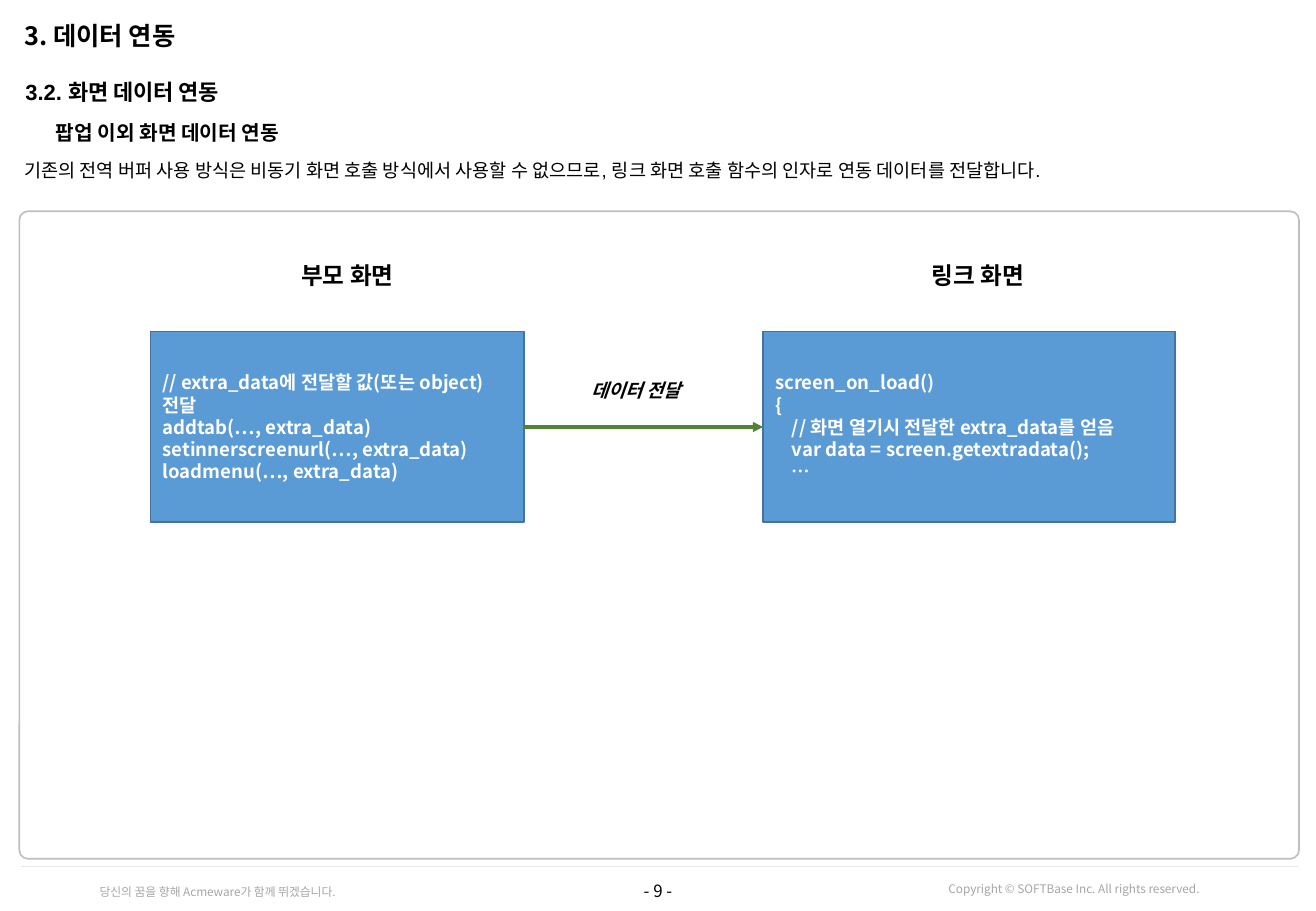
from lxml import etree
from pptx import Presentation
from pptx.dml.color import RGBColor
from pptx.enum.shapes import MSO_CONNECTOR, MSO_SHAPE
from pptx.enum.text import MSO_ANCHOR, MSO_AUTO_SIZE, PP_ALIGN
from pptx.oxml.ns import qn
from pptx.util import Inches, Pt

LEFT, CENTER, RIGHT = PP_ALIGN.LEFT, PP_ALIGN.CENTER, PP_ALIGN.RIGHT
TOP, MIDDLE = MSO_ANCHOR.TOP, MSO_ANCHOR.MIDDLE
BLACK = RGBColor(0x00, 0x00, 0x00)
WHITE = RGBColor(0xFF, 0xFF, 0xFF)
BLUE = RGBColor(0x5B, 0x9B, 0xD5)
DARK_BLUE = RGBColor(0x43, 0x73, 0x9E)
GREEN = RGBColor(0x54, 0x82, 0x35)
FRAME_GRAY = RGBColor(0xBF, 0xBF, 0xBF)
RULE_GRAY = RGBColor(0xE7, 0xE6, 0xE6)
FOOTER_GRAY = RGBColor(0xA6, 0xA6, 0xA6)
NOTO, ARIAL = "Noto Sans CJK KR", "Arial"

# Content: left, top, width, height in inches
TITLE = ("3. 데이터 연동", (0.16, 0.13, 10.55, 0.34))
HEADINGS = [  # text, place, size, font, bold
    ("3.2. 화면 데이터 연동", (0.17, 0.61, 10.54, 0.28), 13, ARIAL, True),
    ("팝업 이외 화면 데이터 연동", (0.42, 0.95, 10.29, 0.28), 12, NOTO, True),
    ("기존의 전역 버퍼 사용 방식은 비동기 화면 호출 방식에서 사용할 수 없으므로, "
     "링크 화면 호출 함수의 인자로 연동 데이터를 전달합니다.",
     (0.16, 1.27, 10.55, 0.41), 11, ARIAL, False),
]
FOOTERS = [  # text, place, size, colour, alignment
    ("- 9 -", (0, 7.18, 10.83, 0.31), 10, BLACK, CENTER),
    ("Copyright © SOFTBase Inc. All rights reserved.",
     (7.7, 7.21, 2.27, 0.22), 7, FOOTER_GRAY, RIGHT),
    ("당신의 꿈을 향해 Acmeware가 함께 뛰겠습니다.",
     (0.58, 7.23, 2.28, 0.22), 7, FOOTER_GRAY, RIGHT),
]
SCREENS = [  # code lines, left, width
    ("// extra_data에 전달할 값(또는 object) 전달\n"
     "addtab(…, extra_data)\n"
     "setinnerscreenurl(…, extra_data)\n"
     "loadmenu(…, extra_data)", 1.24, 3.07),
    ("screen_on_load()\n"
     "{\n"
     "    // 화면 열기시 전달한 extra_data를 얻음\n"
     "    var data = screen.getextradata();\n"
     "    …", 6.28, 3.39),
]
SCREEN_TOP, SCREEN_HEIGHT = 2.73, 1.57
LABELS = [  # text, place, size, italic
    ("부모 화면", (2.33, 2.1, 1.06, 0.34), 14, False),
    ("링크 화면", (7.52, 2.1, 1.06, 0.34), 14, False),
    ("데이터 전달", (4.72, 3.07, 1.03, 0.29), 11, True),
]


def inches(place):
    return [Inches(value) for value in place]


def write(box, text, size, font=NOTO, color=BLACK, bold=False, italic=False,
          align=LEFT, anchor=TOP, inset=None, wrap=True):
    frame = box.text_frame
    frame.text = text
    frame.word_wrap = wrap
    frame.auto_size = MSO_AUTO_SIZE.NONE
    frame.vertical_anchor = anchor
    if inset is not None:
        frame.margin_left = frame.margin_right = Inches(inset)
        frame.margin_top = frame.margin_bottom = Inches(inset)
    for para in frame.paragraphs:
        para.alignment = align
        for span in para.runs:
            span.font.size, span.font.name = Pt(size), font
            span.font.bold, span.font.italic = bold, italic
            span.font.color.rgb = color
            etree.SubElement(span.font._element, qn("a:ea"), typeface=NOTO)


def add_line(page, start, end, color, width):
    line = page.shapes.add_connector(MSO_CONNECTOR.STRAIGHT, *inches(start + end))
    line.line.color.rgb, line.line.width = color, Pt(width)
    etree.SubElement(line._element.spPr, qn("a:effectLst"))
    return line


def add_box(page, kind, place, color, fill=None):
    box = page.shapes.add_shape(kind, *inches(place))
    box.shadow.inherit = False
    box.line.color.rgb, box.line.width = color, Pt(1)
    if fill is None:
        box.fill.background()
    else:
        box.fill.solid()
        box.fill.fore_color.rgb = fill
    return box


def main():
    deck = Presentation()
    deck.slide_width, deck.slide_height = Inches(10.83), Inches(7.5)
    page = deck.slides.add_slide(deck.slide_layouts[5])

    # Footer and frame
    for text, place, size, color, align in FOOTERS:
        box = page.shapes.add_textbox(*inches(place))
        write(box, text, size, color=color, align=align, anchor=MIDDLE)
    add_line(page, (0.17, 7.13), (10.68, 7.13), RULE_GRAY, 0.5)
    frame = add_box(page, MSO_SHAPE.ROUNDED_RECTANGLE,
                    (0.16, 1.74, 10.53, 5.33), FRAME_GRAY)
    frame.adjustments[0] = 0.013

    # Title and headings
    text, place = TITLE
    title = page.shapes.title
    title.left, title.top, title.width, title.height = inches(place)
    write(title, text, 15, bold=True, inset=0.04)
    for text, place, size, font, bold in HEADINGS:
        box = page.shapes.add_textbox(*inches(place))
        write(box, text, size, font, bold=bold, inset=0.04)

    # Screens with their code
    for code, left, width in SCREENS:
        box = add_box(page, MSO_SHAPE.RECTANGLE,
                      (left, SCREEN_TOP, width, SCREEN_HEIGHT), DARK_BLUE, BLUE)
        write(box, code, 11, color=WHITE, bold=True, anchor=MIDDLE)

    # Arrow from the parent screen to the linked screen
    (_, parent_left, parent_width), (_, link_left, _) = SCREENS
    middle = SCREEN_TOP + SCREEN_HEIGHT / 2
    arrow = add_line(page, (parent_left + parent_width, middle),
                     (link_left, middle), GREEN, 2)
    etree.SubElement(arrow.line._get_or_add_ln(), qn("a:tailEnd"), type="triangle")

    # Labels
    for text, place, size, italic in LABELS:
        box = page.shapes.add_textbox(*inches(place))
        write(box, text, size, ARIAL, bold=True, italic=italic,
              align=CENTER, wrap=False)

    deck.save("out.pptx")


if __name__ == "__main__":
    main()
